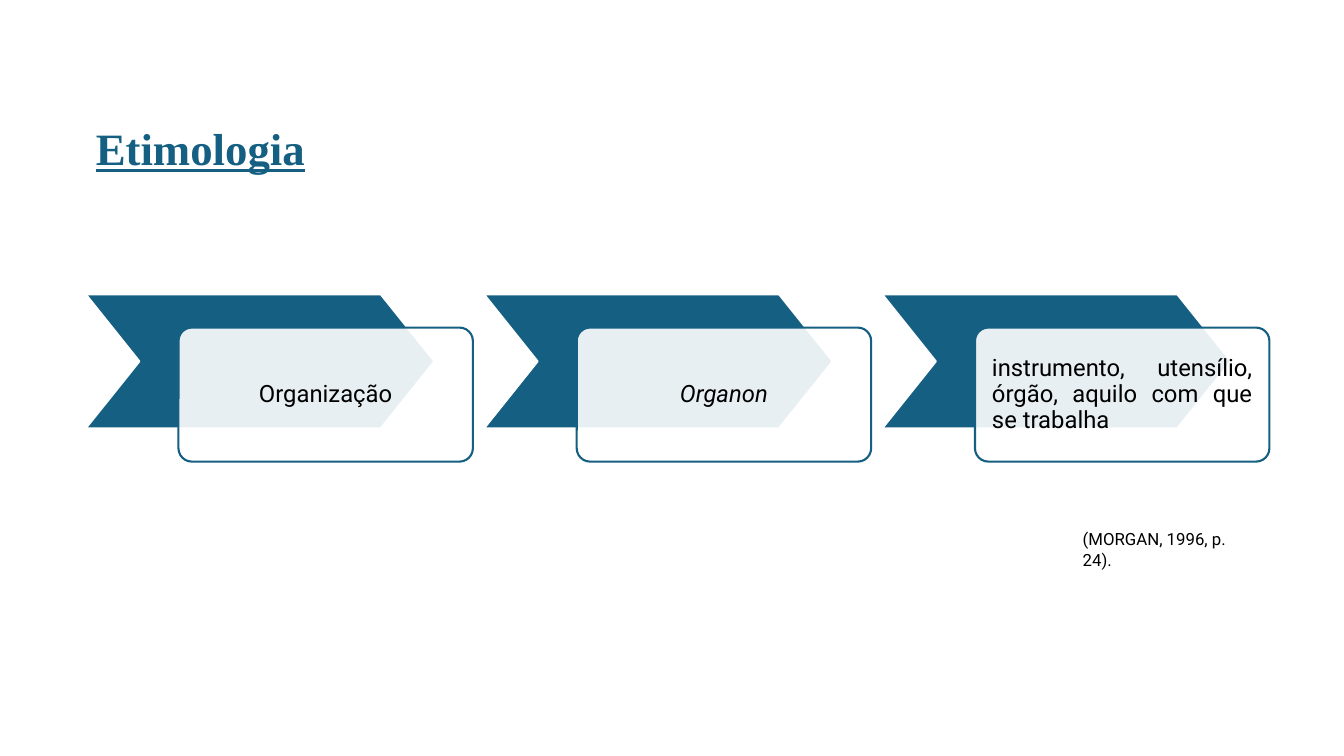
from lxml import etree
from pptx import Presentation
from pptx import util as u
from pptx.dml.color import RGBColor
from pptx.enum import shapes, text
from pptx.oxml.ns import qn

PX = 9144
COLOURS = {"teal": "156082", "white": "FFFFFF", "black": "000000"}
STEPS = [
    ("Organização", {}, text.PP_ALIGN.CENTER),
    ("Organon", {"italic": True}, text.PP_ALIGN.CENTER),
    ("instrumento, utensílio, órgão, aquilo com que se trabalha", {}, text.PP_ALIGN.JUSTIFY),
]
STEP_LEFT, STEP_TOP, STEP_PITCH = 85, 292, 395
CARD_DX, CARD_DY = 92, 33


def px(*lengths):
    return [u.Emu(length * PX) for length in lengths]


def colour(name):
    return RGBColor.from_string(COLOURS[name])


def apply(target, values):
    for name, value in values.items():
        setattr(target, name, value)


class SlideBuilder:
    body = {"name": "Roboto", "size": u.Pt(17)}
    heading = {"name": "Times New Roman", "size": u.Pt(32), "bold": True, "underline": True}
    caption_font = {"name": "Roboto", "size": u.Pt(12)}

    def __init__(self, presentation):
        self.slide = presentation.slides.add_slide(presentation.slide_layouts[5])

    def put_text(self, shape, words, font, ink, frame, paragraph_format):
        apply(shape.text_frame, {"word_wrap": True, **frame})
        paragraph = shape.text_frame.paragraphs[0]
        apply(paragraph, paragraph_format)
        run = paragraph.add_run()
        run.text = words
        apply(run.font, font)
        run.font.color.rgb = colour(ink)

    def title(self, words, box):
        shape = self.slide.shapes.title
        apply(shape, dict(zip(("left", "top", "width", "height"), px(*box))))
        self.put_text(shape, words, self.heading, "teal",
                      {"auto_size": text.MSO_AUTO_SIZE.NONE,
                       "vertical_anchor": text.MSO_ANCHOR.TOP},
                      {"alignment": text.PP_ALIGN.LEFT})

    def caption(self, words, box):
        shape = self.slide.shapes.add_textbox(*px(*box))
        self.put_text(shape, words, self.caption_font, "black", {}, {})

    def block(self, kind, box, adjustment, fill, line):
        shape = self.slide.shapes.add_shape(kind, *px(*box))
        shape.shadow.inherit = False
        shape.adjustments[0] = adjustment
        shape.fill.solid()
        shape.fill.fore_color.rgb = colour(fill)
        shape.line.color.rgb = colour(line)
        shape.line.width = u.Pt(1.5)
        return shape

    def chevron(self, box):
        self.block(shapes.MSO_SHAPE.CHEVRON, box, 0.4, "teal", "white")

    def card(self, words, emphasis, alignment, box):
        shape = self.block(shapes.MSO_SHAPE.ROUNDED_RECTANGLE, box, 0.1, "white", "teal")
        fill = shape.element.spPr.find(qn("a:solidFill"))
        etree.SubElement(fill[0], qn("a:alpha"), val="90000")
        sides = ("margin_left", "margin_top", "margin_right", "margin_bottom")
        frame = dict.fromkeys(sides, u.Emu(13 * PX))
        frame["vertical_anchor"] = text.MSO_ANCHOR.MIDDLE
        self.put_text(shape, words, {**self.body, **emphasis}, "black", frame,
                      {"alignment": alignment, "line_spacing": 0.9})


def main():
    presentation = Presentation()
    presentation.slide_width, presentation.slide_height = px(1333, 750)
    builder = SlideBuilder(presentation)
    builder.title("Etimologia", (85, 115, 317, 64))
    for index, (words, emphasis, alignment) in enumerate(STEPS):
        left = STEP_LEFT + index * STEP_PITCH
        builder.chevron((left, STEP_TOP, 346, 133))
        builder.card(words, emphasis, alignment,
                     (left + CARD_DX, STEP_TOP + CARD_DY, 292, 133))
    builder.caption("(MORGAN, 1996, p. 24).", (1064, 520, 194, 30))
    presentation.save("out.pptx")


if __name__ == "__main__":
    main()
